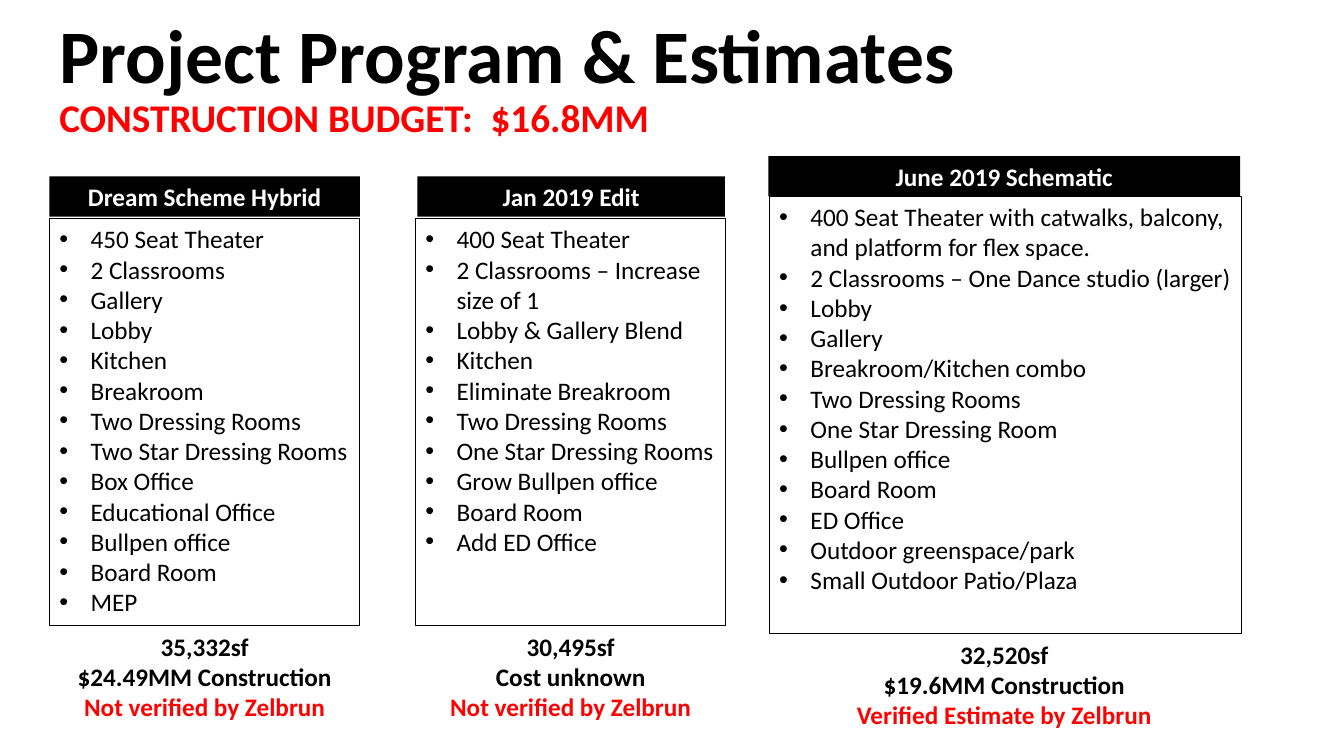
from lxml.etree import SubElement
from pptx import Presentation
from pptx.dml.color import RGBColor
from pptx.enum.shapes import MSO_SHAPE
from pptx.enum.text import MSO_ANCHOR, MSO_AUTO_SIZE, PP_ALIGN
from pptx.oxml.ns import qn
from pptx.util import Inches, Pt

BLACK, WHITE, RED = "000000", "FFFFFF", "FF0000"


def rgb(hex_color):
    return RGBColor.from_string(hex_color)


def write(shape, lines, size=18, bold=True, align=PP_ALIGN.CENTER, bullets=False):
    """Fill a shape with (text, colour) lines, one paragraph each."""
    frame = shape.text_frame
    frame.word_wrap = True
    frame.auto_size = MSO_AUTO_SIZE.NONE
    frame.vertical_anchor = MSO_ANCHOR.TOP
    for i, (text, color) in enumerate(lines):
        paragraph = frame.add_paragraph() if i else frame.paragraphs[0]
        paragraph.alignment = align
        run = paragraph.add_run()
        run.text = text
        run.font.name = "Calibri"
        run.font.size = Pt(size)
        run.font.bold = bold
        run.font.color.rgb = rgb(color)
        if bullets:
            properties = paragraph._p.get_or_add_pPr()
            properties.set("marL", str(Inches(0.31)))
            properties.set("indent", str(-Inches(0.31)))
            SubElement(properties, qn("a:buFont"), typeface="Arial")
            SubElement(properties, qn("a:buChar"), char="•")


prs = Presentation()
prs.slide_width, prs.slide_height = Inches(13.33), Inches(7.5)
slide = prs.slides.add_slide(prs.slide_layouts[5])
shapes = slide.shapes

# Title and budget line
title = shapes.title
title.left, title.top = Inches(0.49), Inches(0.03)
title.width, title.height = Inches(11.96), Inches(1.01)
write(title, [("Project Program & Estimates", BLACK)], 54, align=PP_ALIGN.LEFT)

budget = shapes.add_textbox(Inches(0.49), Inches(0.88), Inches(11.96), Inches(0.57))
write(budget, [("CONSTRUCTION BUDGET:  $16.8MM", RED)], 28, align=PP_ALIGN.LEFT)

# Schemes: name, header (left, top, width), program (left, top, width, height),
# rooms, summary (left, width), area, cost, verification
schemes = [
    ("Dream Scheme Hybrid", (0.49, 1.75, 3.08), (0.49, 2.17, 3.08, 4.04),
     ["450 Seat Theater", "2 Classrooms", "Gallery", "Lobby", "Kitchen", "Breakroom",
      "Two Dressing Rooms", "Two Star Dressing Rooms", "Box Office",
      "Educational Office", "Bullpen office", "Board Room", "MEP"],
     (0.49, 3.08), "35,332sf", "$24.49MM Construction", "Not verified by Zelbrun"),
    ("Jan 2019 Edit", (4.14, 1.75, 3.05), (4.12, 2.17, 3.08, 4.04),
     ["400 Seat Theater", "2 Classrooms – Increase  size of 1",
      "Lobby & Gallery Blend", "Kitchen", "Eliminate Breakroom",
      "Two Dressing Rooms", "One Star Dressing Rooms", "Grow Bullpen office",
      "Board Room", "Add ED Office"],
     (4.12, 3.08), "30,495sf", "Cost unknown", "Not verified by Zelbrun"),
    ("June 2019 Schematic", (7.62, 1.55, 4.68), (7.63, 1.95, 4.68, 4.34),
     ["400 Seat Theater with catwalks, balcony, and platform for flex space.",
      "2 Classrooms – One Dance studio (larger)", "Lobby", "Gallery",
      "Breakroom/Kitchen combo", "Two Dressing Rooms", "One Star Dressing Room",
      "Bullpen office", "Board Room", "ED Office", "Outdoor greenspace/park",
      "Small Outdoor Patio/Plaza"],
     (8.02, 3.88), "32,520sf", "$19.6MM Construction", "Verified Estimate by Zelbrun"),
]

for name, header_at, program_at, rooms, summary_at, area, cost, verified in schemes:
    # Bulleted room list
    left, top, width, height = program_at
    program = shapes.add_shape(MSO_SHAPE.RECTANGLE, Inches(left), Inches(top),
                               Inches(width), Inches(height))
    program.shadow.inherit = False
    program.fill.background()
    program.line.color.rgb = rgb(BLACK)
    program.line.width = Pt(0.75)
    write(program, [(room, BLACK) for room in rooms], bold=False,
          align=PP_ALIGN.LEFT, bullets=True)

    # Area, cost and verification right under the list
    summary_left, summary_width = summary_at
    summary = shapes.add_textbox(Inches(summary_left), Inches(top + height),
                                 Inches(summary_width), Inches(1.01))
    write(summary, [(area, BLACK), (cost, BLACK), (verified, RED)])

    # Black header bar
    left, top, width = header_at
    header = shapes.add_shape(MSO_SHAPE.RECTANGLE, Inches(left), Inches(top),
                              Inches(width), Inches(0.4))
    header.shadow.inherit = False
    header.fill.solid()
    header.fill.fore_color.rgb = rgb(BLACK)
    header.line.fill.background()
    write(header, [(name, WHITE)])

prs.save("out.pptx")
